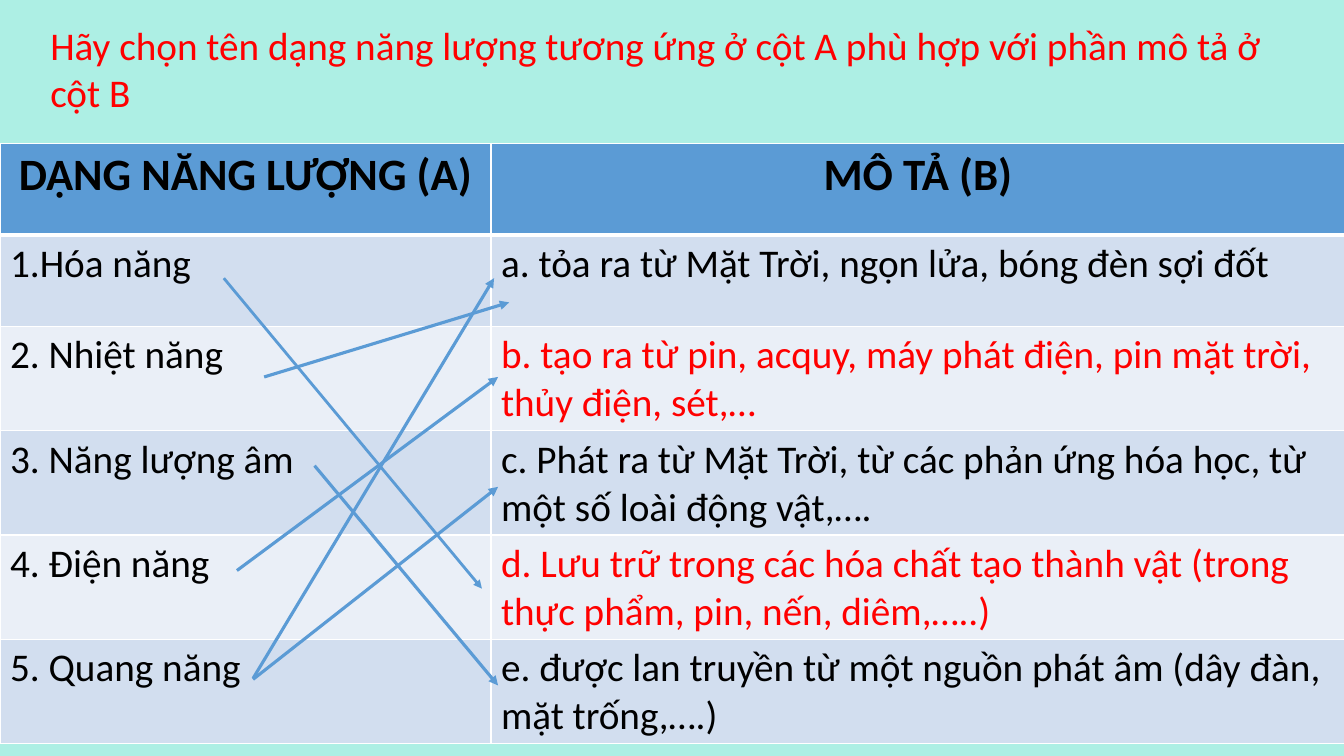
from typing import NamedTuple

from lxml.etree import SubElement
from pptx import Presentation
from pptx.dml.color import RGBColor
from pptx.enum.shapes import MSO_CONNECTOR as CONN
from pptx.enum.text import MSO_AUTO_SIZE as AUTO, PP_ALIGN as ALIGN
from pptx.oxml.ns import qn
from pptx.util import Inches, Pt

RED, BLACK, WHITE, BLUE = "FF0000", "000000", "FFFFFF", "5B9BD5"
BANDS = ("D2DEEF", "EAEFF7")
FONT = "Calibri"


class Pair(NamedTuple):
    energy: str
    description: str
    color: str = BLACK


class Arrow(NamedTuple):
    x1: float
    y1: float
    x2: float
    y2: float
    width: float = 2.25


TITLE = "Hãy chọn tên dạng năng lượng tương ứng ở cột A phù hợp với phần mô tả ở cột B"
HEADER = Pair("DẠNG NĂNG LƯỢNG (A)", "MÔ TẢ (B)")
PAIRS = [
    Pair("1.Hóa năng", "a. tỏa ra từ Mặt Trời, ngọn lửa, bóng đèn sợi đốt"),
    Pair("2. Nhiệt năng", "b. tạo ra từ pin, acquy, máy phát điện, pin mặt trời, thủy điện, sét,…", RED),
    Pair("3. Năng lượng âm", "c. Phát ra từ Mặt Trời, từ các phản ứng hóa học, từ một số loài động vật,…."),
    Pair("4. Điện năng", "d. Lưu trữ trong các hóa chất tạo thành vật (trong thực phẩm, pin, nến, diêm,…..)", RED),
    Pair("5. Quang năng", "e. được lan truyền từ một nguồn phát âm (dây đàn, mặt trống,….)"),
]
ARROWS = [
    Arrow(2.22, 2.76, 4.78, 5.84, 2),
    Arrow(2.62, 3.74, 5.05, 3),
    Arrow(2.51, 6.74, 4.94, 4.83),
    Arrow(2.35, 5.66, 4.94, 3.74),
    Arrow(3.12, 4.62, 4.94, 6.8),
    Arrow(2.51, 6.73, 4.9, 2.76),
]


def rgb(color: str) -> RGBColor:
    return RGBColor.from_string(color)


def write(tf, text: str, size: float, color: str, bold: bool = False) -> None:
    tf.text = text
    font = tf.paragraphs[0].runs[0].font
    font.name, font.size, font.bold = FONT, Pt(size), bold
    font.color.rgb = rgb(color)


def set_borders(cell, bottom: float) -> None:
    tc_pr = cell._tc.get_or_add_tcPr()
    for side, width in (("L", 1), ("R", 1), ("T", 1), ("B", bottom)):
        ln = SubElement(tc_pr, qn(f"a:ln{side}"), w=str(Pt(width)))
        fill = SubElement(ln, qn("a:solidFill"))
        SubElement(fill, qn("a:srgbClr"), val=WHITE)


def add_row(table, row: int, pair: Pair) -> None:
    header = row == 0
    table.rows[row].height = Inches(0.91)
    for col, text in enumerate((pair.energy, pair.description)):
        cell = table.cell(row, col)
        color = pair.color if col else BLACK
        write(cell.text_frame, text, 32 if header else 28, color, header)
        if header:
            cell.text_frame.paragraphs[0].alignment = ALIGN.CENTER
        set_borders(cell, 3 if header else 1)
        cell.fill.solid()
        cell.fill.fore_color.rgb = rgb(BLUE if header else BANDS[(row - 1) % 2])


def add_arrow(slide, arrow: Arrow) -> None:
    ends = [Inches(v) for v in arrow[:4]]
    line = slide.shapes.add_connector(CONN.STRAIGHT, *ends)
    line.line.color.rgb = rgb(BLUE)
    line.line.width = Pt(arrow.width)
    SubElement(line.line._get_or_add_ln(), qn("a:tailEnd"), type="triangle")
    SubElement(line._element.spPr, qn("a:effectLst"))


def main() -> None:
    prs = Presentation()
    prs.slide_width, prs.slide_height = Inches(13.33), Inches(7.5)
    slide = prs.slides.add_slide(prs.slide_layouts[6])
    slide.background.fill.solid()
    slide.background.fill.fore_color.rgb = rgb("ADEFE4")

    # Instruction
    box = slide.shapes.add_textbox(Inches(0.4), Inches(0.16), Inches(12.45), Inches(1.04))
    tf = box.text_frame
    tf.word_wrap = True
    tf.auto_size = AUTO.SHAPE_TO_FIT_TEXT
    write(tf, TITLE, 28, RED)

    # Matching table
    rows = [HEADER, *PAIRS]
    table = slide.shapes.add_table(
        len(rows), 2, 0, Inches(1.42), Inches(13.34), Inches(0.91 * len(rows))).table
    for col, width in enumerate((4.87, 8.47)):
        table.columns[col].width = Inches(width)
    for row, pair in enumerate(rows):
        add_row(table, row, pair)

    # Answer arrows
    for arrow in ARROWS:
        add_arrow(slide, arrow)

    prs.save("out.pptx")


if __name__ == "__main__":
    main()
